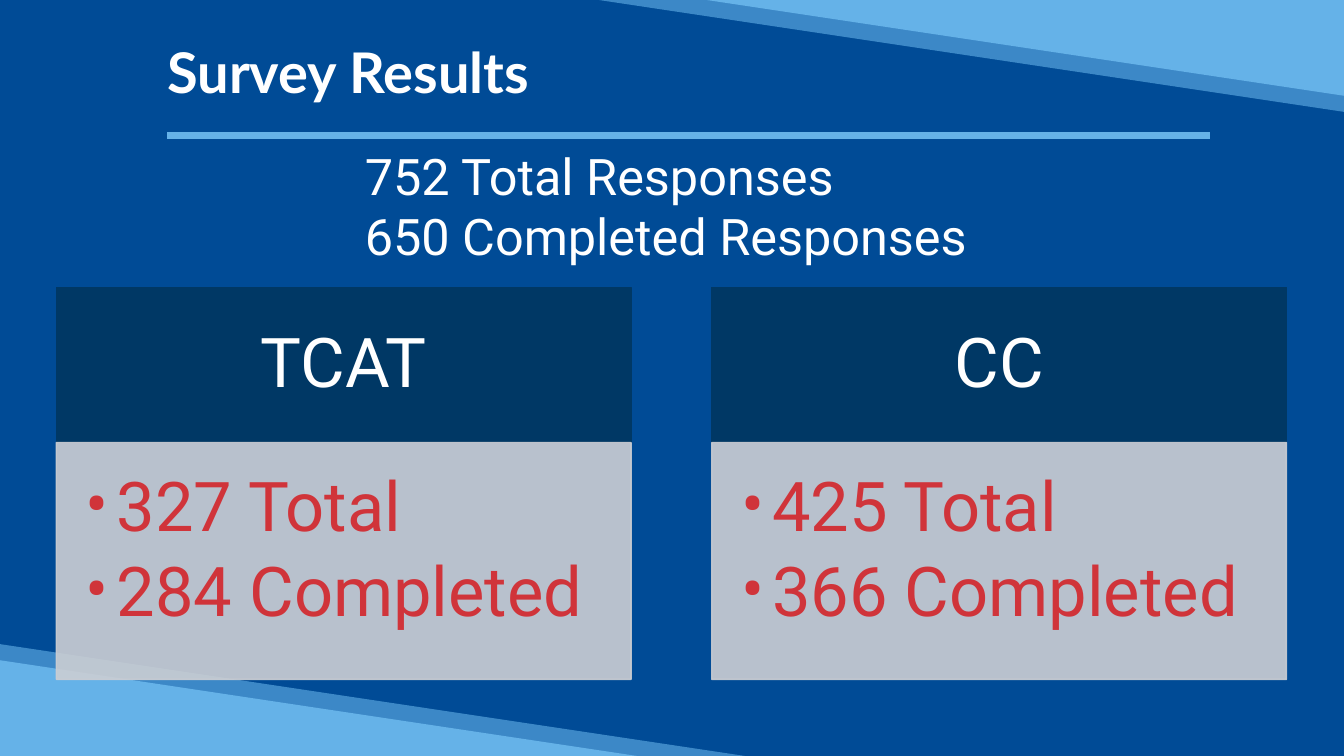
from pptx import Presentation
from pptx.dml.color import RGBColor as RGB
from pptx.enum.shapes import MSO_CONNECTOR as Conn, MSO_SHAPE as Kind
from pptx.enum.text import MSO_ANCHOR as Anchor, PP_ALIGN as Align
from pptx.oxml.ns import qn
from pptx.util import Emu, Pt
from lxml.etree import SubElement

BLUE = RGB(0x00, 0x4B, 0x96)
SKY = RGB(0x65, 0xB2, 0xE8)
NAVY = RGB(0x00, 0x38, 0x65)
GREY = RGB(0xCC, 0xCE, 0xD3)
RED = RGB(0xD0, 0x34, 0x3A)
WHITE = RGB(0xFF, 0xFF, 0xFF)

WIDE, HIGH = 1333, 750
SCALE = 9144


def px(num):
    return Emu(num * SCALE)


class Deck:
    head = "Lato"
    body = "Roboto"

    def __init__(self):
        self.file = Presentation()
        self.file.slide_width = px(WIDE)
        self.file.slide_height = px(HIGH)
        self.slide = self.file.slides.add_slide(self.file.slide_layouts[5])
        self.slide.background.fill.solid()
        self.slide.background.fill.fore_color.rgb = BLUE

    def shape(self, kind, area, color, alpha=100, edge=False):
        item = self.slide.shapes.add_shape(kind, *map(px, area))
        item.shadow.inherit = False
        item.fill.solid()
        item.fill.fore_color.rgb = color
        if edge:
            item.line.color.rgb = color
            item.line.width = Pt(1)
        else:
            item.line.fill.background()
        if alpha < 100:
            for tone in item.element.spPr.iter(qn("a:srgbClr")):
                SubElement(tone, qn("a:alpha"), val=str(alpha * 1000))
        return item

    def wedge(self, wide, high, alpha):
        self.shape(Kind.RIGHT_TRIANGLE, (0, HIGH - high, wide, high), SKY, alpha)
        top = self.shape(Kind.RIGHT_TRIANGLE, (WIDE - wide, 0, wide, high), SKY, alpha)
        top.rotation = 180

    def rule(self, left, right, y):
        line = self.slide.shapes.add_connector(Conn.STRAIGHT, *map(px, (left, y, right, y)))
        line.line.color.rgb = SKY
        line.line.width = Pt(5)
        SubElement(line.element.spPr, qn("a:effectLst"))

    def text(self, item, words, size, color, pads, anchor=Anchor.TOP,
             align=Align.LEFT, space=0.9, font=body, bold=False, dots=False):
        frame = item.text_frame
        frame.text = words
        frame.word_wrap = True
        frame.vertical_anchor = anchor
        (frame.margin_left, frame.margin_top,
         frame.margin_right, frame.margin_bottom) = map(px, pads)
        for para in frame.paragraphs:
            para.alignment = align
            para.line_spacing = space
            if dots:
                self.dot(para)
            for run in para.runs:
                run.font.name = font
                run.font.size = Pt(size)
                run.font.bold = bold
                run.font.color.rgb = color

    def dot(self, para):
        para.level = 1
        para.space_after = Pt(8)
        props = para._p.get_or_add_pPr()
        props.set("marL", str(px(31)))
        props.set("indent", str(px(-31)))
        SubElement(props, qn("a:buFont"), typeface=self.body)
        SubElement(props, qn("a:buChar"), char="•")

    def title(self, words, area):
        item = self.slide.shapes.title
        item.left, item.top, item.width, item.height = map(px, area)
        self.text(item, words, 40, WHITE, (0, 0, 0, 0), Anchor.MIDDLE,
                  font=self.head, bold=True)

    def label(self, words, area):
        item = self.slide.shapes.add_textbox(*map(px, area))
        self.text(item, words, 36, WHITE, (10, 5, 10, 5), space=1.0)

    def card(self, left, name, facts):
        top = self.shape(Kind.RECTANGLE, (left, 285, 570, 154), NAVY, edge=True)
        self.text(top, name, 49, WHITE, (38, 22, 38, 22), Anchor.MIDDLE, Align.CENTER)
        base = self.shape(Kind.RECTANGLE, (left, 439, 570, 235), GREY, 90, True)
        self.text(base, facts, 49, RED, (29, 29, 38, 43), dots=True)


def main():
    deck = Deck()
    deck.wedge(739, 111, 60)
    deck.wedge(632, 95, 100)
    deck.rule(166, 1200, 134)
    deck.title("Survey Results", (166, 27, 1034, 95))
    deck.label("752 Total Responses\n650 Completed Responses", (352, 139, 793, 131))
    cards = [("TCAT", "327 Total\n284 Completed"), ("CC", "425 Total\n366 Completed")]
    for spot, (name, facts) in enumerate(cards):
        deck.card(56 + spot * 650, name, facts)
    deck.file.save("out.pptx")


if __name__ == "__main__":
    main()
